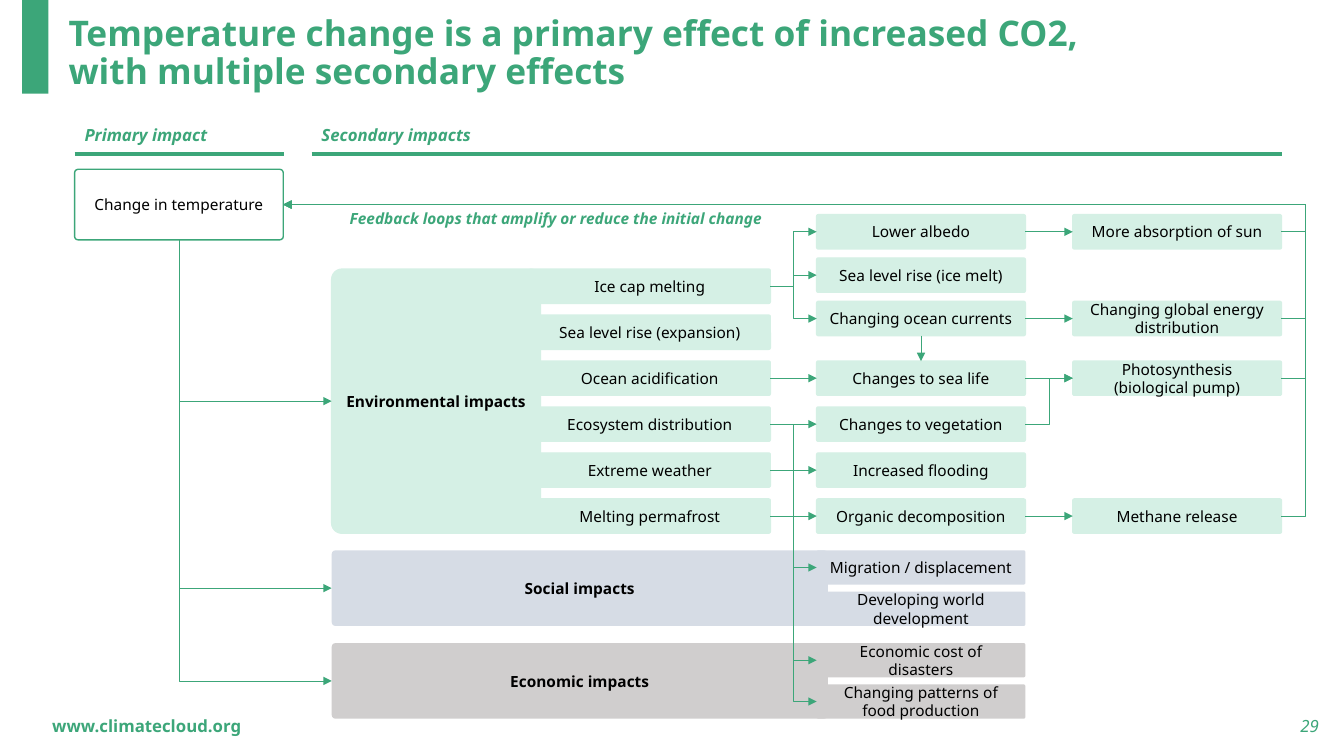
from lxml import etree
from pptx import Presentation
from pptx.dml.color import RGBColor
from pptx.enum.shapes import MSO_CONNECTOR, MSO_SHAPE
from pptx.enum.text import MSO_ANCHOR, MSO_AUTO_SIZE, PP_ALIGN
from pptx.oxml.ns import qn
from pptx.util import Inches, Pt

STRAIGHT, ELBOW = MSO_CONNECTOR.STRAIGHT, MSO_CONNECTOR.ELBOW
RECTANGLE, ROUNDED = MSO_SHAPE.RECTANGLE, MSO_SHAPE.ROUNDED_RECTANGLE
LEFT, CENTER, RIGHT = PP_ALIGN.LEFT, PP_ALIGN.CENTER, PP_ALIGN.RIGHT
TOP, MIDDLE = MSO_ANCHOR.TOP, MSO_ANCHOR.MIDDLE
TOP_SIDE, LEFT_SIDE, BOTTOM_SIDE, RIGHT_SIDE = range(4)

FONT = "Noto Sans"
GREEN, MINT, BLUE, GREY, BLACK = "3CA679", "D5F0E5", "D6DCE5", "D0CECE", "000000"
BOX_WIDTH, BOX_HEIGHT = 2.07, 0.34
ENVIRONMENT_ROWS = ["Ice cap melting", "Sea level rise (expansion)", "Ocean acidification",
                    "Ecosystem distribution", "Extreme weather", "Melting permafrost"]
ICE_EFFECTS = ["Lower albedo", "Sea level rise (ice melt)", "Changing ocean currents"]
LATER_EFFECTS = ["Changes to sea life", "Changes to vegetation", "Increased flooding",
                 "Organic decomposition"]
FEEDBACKS = {"Lower albedo": "More absorption of sun",
             "Changing ocean currents": "Changing global energy distribution",
             "Changes to sea life": "Photosynthesis (biological pump)",
             "Organic decomposition": "Methane release"}
SOCIAL_EFFECTS = ["Migration / displacement", "Developing world development"]
ECONOMIC_EFFECTS = ["Economic cost of disasters", "Changing patterns of food production"]


def color(hex_code):
    return RGBColor.from_string(hex_code)


def write(shape, text, size, hex_code, bold=False, italic=False, align=LEFT, anchor=MIDDLE, wrap=True):
    frame = shape.text_frame
    frame.word_wrap = wrap
    frame.vertical_anchor = anchor
    paragraph = frame.paragraphs[0]
    paragraph.alignment = align
    run = paragraph.add_run()
    run.text = text
    font = run.font
    font.name, font.size, font.bold, font.italic = FONT, Pt(size), bold, italic
    font.color.rgb = color(hex_code)
    return paragraph


def add_label(slide, left, top, width, height, text, size=12, **style):
    label = slide.shapes.add_textbox(Inches(left), Inches(top), Inches(width), Inches(height))
    write(label, text, size, GREEN, **style)


def add_box(slide, left, top, width, height, text, fill=None, outline=None, bold=False):
    box = slide.shapes.add_shape(ROUNDED, Inches(left), Inches(top), Inches(width), Inches(height))
    box.shadow.inherit = False
    box.adjustments[0] = 0.049
    if fill:
        box.fill.solid()
        box.fill.fore_color.rgb = color(fill)
    else:
        box.fill.background()
    if outline:
        box.line.color.rgb = color(outline)
        box.line.width = Pt(1)
    else:
        box.line.fill.background()
    write(box, text, 11, BLACK, bold=bold, align=CENTER)
    return box


def add_line(slide, kind, begin, end, width=0.5, arrow=True):
    """Draw a connector between two (x, y) points given in EMU."""
    line = slide.shapes.add_connector(kind, *begin, *end)
    line.line.color.rgb = color(GREEN)
    line.line.width = Pt(width)
    properties = line._element.spPr
    if arrow:
        etree.SubElement(properties.find(qn("a:ln")), qn("a:tailEnd"), type="triangle")
    etree.SubElement(properties, qn("a:effectLst"))
    return line


def side_point(box, side):
    center, middle = box.left + box.width // 2, box.top + box.height // 2
    return {TOP_SIDE: (center, box.top),
            LEFT_SIDE: (box.left, middle),
            BOTTOM_SIDE: (center, box.top + box.height),
            RIGHT_SIDE: (box.left + box.width, middle)}[side]


def join(slide, source, target, source_side=RIGHT_SIDE, target_side=LEFT_SIDE):
    line = add_line(slide, STRAIGHT, side_point(source, source_side), side_point(target, target_side))
    line.begin_connect(source, source_side)
    line.end_connect(target, target_side)


def branch(slide, source, target):
    add_line(slide, ELBOW, side_point(source, RIGHT_SIDE), side_point(target, LEFT_SIDE))


def drop_branch(slide, source, target):
    """Go down from the source, then right into the target."""
    start_x, start_y = side_point(source, BOTTOM_SIDE)
    end_x, end_y = side_point(target, LEFT_SIDE)
    center_x, center_y = (start_x + end_x) // 2, (start_y + end_y) // 2
    half_drop, half_run = (end_y - start_y) // 2, (end_x - start_x) // 2
    line = add_line(slide, ELBOW, (center_x + half_drop, center_y - half_run),
                    (center_x - half_drop, center_y + half_run))
    properties = line._element.spPr
    properties.find(qn("a:xfrm")).set("rot", "16200000")
    properties.find(qn("a:prstGeom")).set("prst", "bentConnector2")


def feedback_loop(slide, source, target, overshoot=0.24):
    """Leave the source to the right and return to the target's right side."""
    begin, end = side_point(source, RIGHT_SIDE), side_point(target, RIGHT_SIDE)
    line = add_line(slide, ELBOW, begin, end)
    geometry = line._element.spPr.find(qn("a:prstGeom"))
    for old_values in geometry.findall(qn("a:avLst")):
        geometry.remove(old_values)
    values = etree.SubElement(geometry, qn("a:avLst"))
    ratio = round(-Inches(overshoot) / (begin[0] - end[0]) * 100000)
    etree.SubElement(values, qn("a:gd"), name="adj1", fmla=f"val {ratio}")


def add_frame(slide):
    """Place the title, accent bar and footer."""
    bar = slide.shapes.add_shape(RECTANGLE, Inches(0.22), 0, Inches(0.26), Inches(0.93))
    bar.shadow.inherit = False
    bar.fill.solid()
    bar.fill.fore_color.rgb = color(GREEN)
    bar.line.fill.background()
    title = slide.shapes.title
    title.left, title.top, title.width, title.height = map(Inches, (0.58, 0.16, 10.46, 0.76))
    title.text_frame.auto_size = MSO_AUTO_SIZE.NONE
    paragraph = write(title, "Temperature change is a primary effect of increased CO2, "
                      "with multiple secondary effects", 25.2, GREEN, bold=True)
    paragraph.line_spacing = 0.9
    add_label(slide, 10.18, 7, 3, 0.4, "29", italic=True, align=RIGHT)
    add_label(slide, 0.42, 7, 4.5, 0.4, "www.climatecloud.org", bold=True)


def add_heading(slide, left, top, width, text):
    add_label(slide, left, top, 1.83, 0.3, text, bold=True, italic=True, anchor=TOP, wrap=False)
    rule = Inches(top + 0.34)
    add_line(slide, STRAIGHT, (Inches(left), rule), (Inches(left + width), rule), 3, arrow=False)


def add_column(slide, left, top, width, step, labels, fill, outline=None):
    return {label: add_box(slide, left, top + row * step, width, BOX_HEIGHT, label, fill, outline)
            for row, label in enumerate(labels)}


def add_environment(slide, left, top):
    """Place the green group and return its boxes by label."""
    step, effects_left = 0.456, left + 4.81
    name = "Environmental impacts"
    boxes = {name: add_box(slide, left, top, BOX_WIDTH, 2.62, name, MINT, MINT, bold=True)}
    boxes |= add_column(slide, left + 1.96, top, 2.39, step, ENVIRONMENT_ROWS, MINT, MINT)
    boxes |= add_column(slide, effects_left, top - 0.54, BOX_WIDTH, 0.43, ICE_EFFECTS, MINT, MINT)
    boxes |= add_column(slide, effects_left, top + 2 * step, BOX_WIDTH, step, LATER_EFFECTS, MINT, MINT)
    for effect, feedback in FEEDBACKS.items():
        boxes[feedback] = add_box(slide, effects_left + 2.54, boxes[effect].top.inches,
                                  BOX_WIDTH, BOX_HEIGHT, feedback, MINT, MINT)
    return boxes


def add_group(slide, left, top, name, effects, fill):
    boxes = {name: add_box(slide, left, top, 4.92, 0.75, name, fill, bold=True)}
    return boxes | add_column(slide, left + 4.81, top, BOX_WIDTH, 0.41, effects, fill)


def connect_boxes(slide, primary, boxes):
    for name in ("Environmental impacts", "Social impacts", "Economic impacts"):
        drop_branch(slide, primary, boxes[name])
    for effect in ICE_EFFECTS:
        branch(slide, boxes["Ice cap melting"], boxes[effect])
    for cause, effect in zip(ENVIRONMENT_ROWS[2:], LATER_EFFECTS):
        join(slide, boxes[cause], boxes[effect])
    for effect, feedback in FEEDBACKS.items():
        join(slide, boxes[effect], boxes[feedback])
        feedback_loop(slide, boxes[feedback], primary)
    join(slide, boxes["Changing ocean currents"], boxes["Changes to sea life"], BOTTOM_SIDE, TOP_SIDE)
    for cause, effect in (("Changes to vegetation", FEEDBACKS["Changes to sea life"]),
                          ("Ecosystem distribution", SOCIAL_EFFECTS[0]),
                          ("Extreme weather", ECONOMIC_EFFECTS[0]),
                          ("Ecosystem distribution", ECONOMIC_EFFECTS[1])):
        branch(slide, boxes[cause], boxes[effect])


def main():
    presentation = Presentation()
    presentation.slide_width, presentation.slide_height = Inches(13.33), Inches(7.5)
    slide = presentation.slides.add_slide(presentation.slide_layouts[5])
    add_frame(slide)
    add_heading(slide, 0.74, 1.19, 2.08, "Primary impact")
    add_heading(slide, 3.09, 1.19, 9.63, "Secondary impacts")
    add_label(slide, 3.37, 2.03, 4.67, 0.29, "Feedback loops that amplify or reduce the initial change",
              size=11, bold=True, italic=True, anchor=TOP, wrap=False)
    primary = add_box(slide, 0.74, 1.68, BOX_WIDTH, 0.7, "Change in temperature", outline=GREEN)
    boxes = add_environment(slide, 3.29, 2.67)
    boxes |= add_group(slide, 3.29, 5.46, "Social impacts", SOCIAL_EFFECTS, BLUE)
    boxes |= add_group(slide, 3.29, 6.38, "Economic impacts", ECONOMIC_EFFECTS, GREY)
    connect_boxes(slide, primary, boxes)
    presentation.save("out.pptx")


if __name__ == "__main__":
    main()
